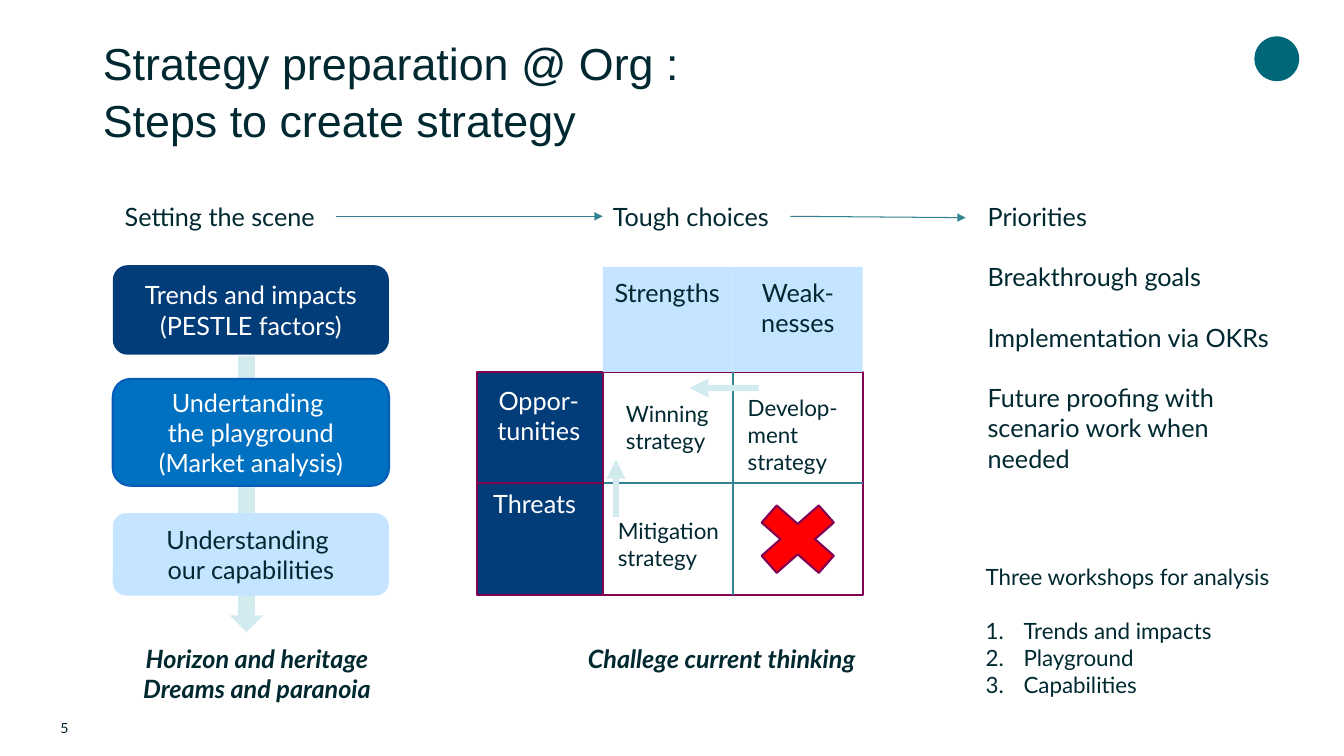
from dataclasses import dataclass
from typing import Optional

import pptx
import pptx.dml.color
import pptx.enum.shapes
import pptx.enum.text
import pptx.oxml.ns
import pptx.util
from lxml import etree

Pt = pptx.util.Pt
RGB = pptx.dml.color.RGBColor
MSO = pptx.enum.shapes.MSO_SHAPE
ANCHOR = pptx.enum.text.MSO_ANCHOR
ALIGN = pptx.enum.text.PP_ALIGN
qn = pptx.oxml.ns.qn

INK = RGB(0x00, 0x28, 0x30)
WHITE = RGB(0xFF, 0xFF, 0xFF)
NAVY = RGB(0x03, 0x3D, 0x79)
BLUE = RGB(0x00, 0x70, 0xC0)
BLUE_EDGE = RGB(0x05, 0x5D, 0xB8)
SKY = RGB(0xC4, 0xE4, 0xFF)
MIST = RGB(0xD1, 0xEB, 0xEF)
TEAL = RGB(0x33, 0x85, 0x93)
DEEP_TEAL = RGB(0x00, 0x67, 0x78)
PLUM = RGB(0x83, 0x00, 0x51)
RED = RGB(0xFF, 0x00, 0x00)

# Matrix grid
LABEL_X, LABEL_W = 340.6, 90
GRID_X, COL_W = LABEL_X + LABEL_W, 92.8
GRID_Y, ROW_H, HEAD_H = 265.7, 79.6, 75


@dataclass(frozen=True)
class Panel:
    x: float
    y: float
    w: float
    h: float
    kind: MSO = MSO.RECTANGLE
    fill: Optional[RGB] = None
    line: Optional[RGB] = None
    lines: tuple[str, ...] = ()
    color: RGB = WHITE


@dataclass(frozen=True)
class Label:
    x: float
    y: float
    w: float
    h: float
    lines: tuple[str, ...]
    size: float = 18
    color: RGB = INK
    centred: bool = False
    emphasis: bool = False
    gaps: tuple[int, ...] = ()  # paragraphs with an empty line's space before
    numbered_from: Optional[int] = None
    inset: bool = True


@dataclass(frozen=True)
class Arrow:
    x1: float
    y1: float
    x2: float
    y2: float
    color: RGB = TEAL
    width: float = 1.5
    head: bool = False


def write_lines(tf, lines: tuple[str, ...], size: float, color: RGB,
                centred: bool, emphasis: bool = False) -> None:
    tf.word_wrap = True
    for i, line in enumerate(lines):
        p = tf.paragraphs[0] if i == 0 else tf.add_paragraph()
        p.alignment = ALIGN.CENTER if centred else ALIGN.LEFT
        r = p.add_run()
        r.text = line
        r.font.name = "Lato"
        r.font.size = Pt(size)
        r.font.color.rgb = color
        if emphasis:
            r.font.bold = r.font.italic = True


def draw_panel(s, panel: Panel):
    sp = s.shapes.add_shape(panel.kind, Pt(panel.x), Pt(panel.y), Pt(panel.w), Pt(panel.h))
    sp.shadow.inherit = False
    if panel.fill is None:
        sp.fill.background()
    else:
        sp.fill.solid()
        sp.fill.fore_color.rgb = panel.fill
    if panel.line is None:
        sp.line.fill.background()
    else:
        sp.line.color.rgb = panel.line
        sp.line.width = Pt(1.5)
    if panel.lines:
        tf = sp.text_frame
        tf.vertical_anchor = ANCHOR.MIDDLE
        write_lines(tf, panel.lines, 18, panel.color, centred=True)
    return sp


def draw_label(s, label: Label):
    sp = s.shapes.add_textbox(Pt(label.x), Pt(label.y), Pt(label.w), Pt(label.h))
    tf = sp.text_frame
    if not label.inset:
        tf.margin_left = tf.margin_top = tf.margin_right = tf.margin_bottom = 0
    write_lines(tf, label.lines, label.size, label.color, label.centred, label.emphasis)
    for i, p in enumerate(tf.paragraphs):
        if label.numbered_from is not None and i >= label.numbered_from:
            pPr = p._p.get_or_add_pPr()
            pPr.set("marL", str(Pt(27)))
            pPr.set("indent", str(-Pt(27)))
            etree.SubElement(pPr, qn("a:buAutoNum"), type="arabicPeriod")
        if i in label.gaps:
            p.space_before = Pt(label.size * 1.2)
    return sp


def draw_arrow(s, arrow: Arrow):
    c = s.shapes.add_connector(pptx.enum.shapes.MSO_CONNECTOR.STRAIGHT, Pt(arrow.x1),
                               Pt(arrow.y1), Pt(arrow.x2), Pt(arrow.y2))
    c.line.color.rgb = arrow.color
    c.line.width = Pt(arrow.width)
    if arrow.head:
        etree.SubElement(c.line._get_or_add_ln(), qn("a:tailEnd"), type="triangle")
    etree.SubElement(c._element.spPr, qn("a:effectLst"))
    return c


def draw_title(s) -> None:
    sp = s.shapes.title
    sp.left, sp.top, sp.width, sp.height = Pt(73.5), Pt(20), Pt(813), Pt(84.4)
    tf = sp.text_frame
    tf.margin_left = tf.margin_top = tf.margin_right = tf.margin_bottom = 0
    tf.vertical_anchor = ANCHOR.BOTTOM
    tf.auto_size = pptx.enum.text.MSO_AUTO_SIZE.NONE
    p = tf.paragraphs[0]
    p.alignment = ALIGN.LEFT
    p.line_spacing = 1.05
    for i, line in enumerate(("Strategy preparation @ Org :", "Steps to create strategy")):
        if i:
            p.add_line_break()
        r = p.add_run()
        r.text = line
        r.font.name = "Arial"
        r.font.size = Pt(32)
        r.font.color.rgb = INK


def draw_scene(s) -> None:
    rounded = MSO.ROUNDED_RECTANGLE
    for panel in (
        Panel(164.2, 254.2, 23.8, 197.3, MSO.DOWN_ARROW, MIST),
        Panel(80.6, 189.4, 197.3, 64, rounded, NAVY,
              lines=("Trends and impacts", "(PESTLE factors)")),
        Panel(80.6, 270.7, 197.3, 76.3, rounded, BLUE, BLUE_EDGE,
              ("Undertanding ", "the playground", "(Market analysis)")),
        Panel(80.6, 366.5, 197.3, 59, rounded, SKY,
              lines=("Understanding ", "our capabilities"), color=INK),
    ):
        draw_panel(s, panel)


def draw_matrix(s) -> None:
    mid_x, mid_y = GRID_X + COL_W, GRID_Y + ROW_H
    right, bottom = GRID_X + 2 * COL_W, GRID_Y + 2 * ROW_H
    frame = draw_panel(s, Panel(GRID_X, GRID_Y, 2 * COL_W, 2 * ROW_H, line=PLUM))
    for divider, start, end in ((Arrow(mid_x, GRID_Y, mid_x, bottom), 0, 2),
                                (Arrow(right, mid_y, GRID_X, mid_y), 3, 1)):
        c = draw_arrow(s, divider)
        c.begin_connect(frame, start)
        c.end_connect(frame, end)
    for i in range(2):
        draw_panel(s, Panel(LABEL_X, GRID_Y + i * ROW_H, LABEL_W, ROW_H, fill=NAVY, line=PLUM))
        draw_panel(s, Panel(GRID_X + i * COL_W, GRID_Y - HEAD_H, COL_W, HEAD_H, fill=SKY))
    draw_panel(s, Panel(530.6, 350.6, 78.5, 69.1, MSO.MATH_MULTIPLY, RED, PLUM))
    for label in (
        Label(345.6, 271.4, 78.5, 75, ("Oppor-", "tunities"), color=WHITE, centred=True),
        Label(343.4, 345.6, 77, 30, ("Threats",), color=WHITE, centred=True),
        Label(428.4, 194.4, 96.5, 52, ("Strengths",), centred=True),
        Label(534, 194.4, 72, 51, ("Weak-", "nesses"), centred=True),
        Label(440, 282.2, 80.6, 46, ("Winning", "strategy"), 16),
        Label(434.2, 365.8, 89.3, 46, ("Mitigation", "strategy"), 16),
        Label(527, 278, 82, 65.5, ("Develop-", "ment", "strategy"), 16),
    ):
        draw_label(s, label)
    draw_arrow(s, Arrow(542.2, 277.2, 492.5, 277.2, MIST, 4.5, True))
    draw_arrow(s, Arrow(440, 369.4, 440, 328.3, MIST, 4.5, True))


def draw_headings_and_notes(s) -> None:
    scene = draw_label(s, Label(82, 140, 157.8, 29, ("Setting the scene",)))
    choices = draw_label(s, Label(430.6, 140, 134, 29, ("Tough choices",)))
    c = draw_arrow(s, Arrow(239.8, 154.5, 430.6, 154.5, width=0.75, head=True))
    c.begin_connect(scene, 3)
    c.end_connect(choices, 1)
    c = draw_arrow(s, Arrow(564.6, 154.5, 689.8, 155.5, width=0.75, head=True))
    c.begin_connect(choices, 3)
    for label in (
        Label(698.4, 140, 224, 225.4,
              ("Priorities", "Breakthrough goals", "Implementation via OKRs",
               "Future proofing with", "scenario work when", "needed"), gaps=(1, 2, 3)),
        Label(404, 455.8, 226.8, 52.6, ("Challege current thinking ",),
              centred=True, emphasis=True),
        Label(80.6, 455.8, 206, 52.6, ("Horizon and heritage", "Dreams and paranoia"),
              centred=True, emphasis=True),
        Label(697, 398.9, 226, 123.8,
              ("Three workshops for analysis", "Trends and impacts", "Playground",
               "Capabilities"), 16, gaps=(1,), numbered_from=1),
        Label(43.2, 514, 28, 17.3, ("5",), 10, inset=False),
    ):
        draw_label(s, label)


def main() -> None:
    prs = pptx.Presentation()
    prs.slide_width, prs.slide_height = Pt(960), Pt(540)
    s = prs.slides.add_slide(prs.slide_layouts[5])
    draw_title(s)
    # Plain emblem in the top corner
    draw_panel(s, Panel(896, 26, 32, 32, MSO.OVAL, DEEP_TEAL))
    draw_scene(s)
    draw_matrix(s)
    draw_headings_and_notes(s)
    prs.save("out.pptx")


if __name__ == "__main__":
    main()
